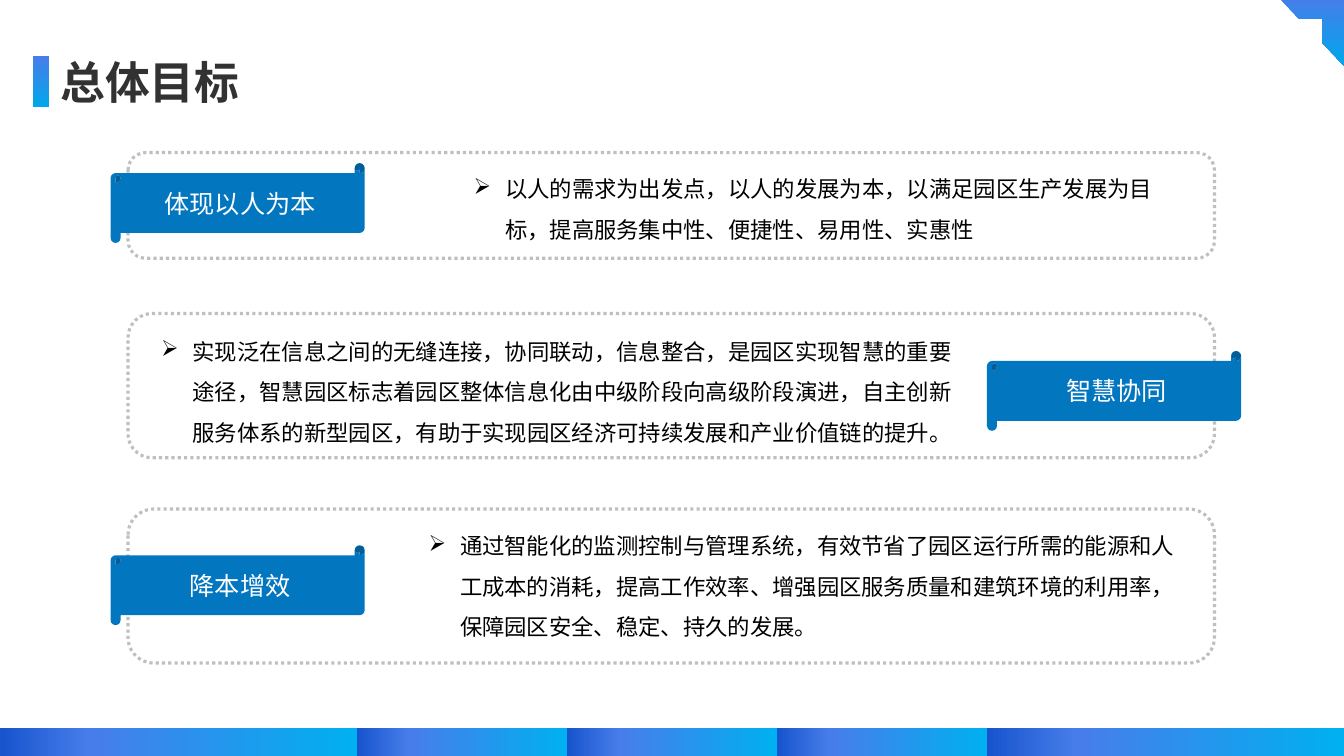
from itertools import accumulate

from lxml.etree import SubElement
from pptx import Presentation
from pptx.dml.color import RGBColor
from pptx.enum.dml import MSO_LINE
from pptx.enum.shapes import MSO_SHAPE as Preset
from pptx.enum.text import MSO_ANCHOR as Anchor, PP_ALIGN as Align
from pptx.oxml.ns import qn
from pptx.util import Pt

# Content: places are left, top, width, height in points
TITLE = "总体目标"
GOALS = [
    {
        "name": "体现以人为本",
        "detail": "以人的需求为出发点，以人的发展为本，以满足园区生产发展为目标，提高服务集中性、便捷性、易用性、实惠性",
        "frame": (109, 75.5),
        "label": (79, 116.5),
        "body": (331.2, 112.3, 504.7, 65.5),
    },
    {
        "name": "智慧协同",
        "detail": "实现泛在信息之间的无缝连接，协同联动，信息整合，是园区实现智慧的重要途径，智慧园区标志着园区整体信息化由中级阶段向高级阶段演进，自主创新服务体系的新型园区，有助于实现园区经济可持续发展和产业价值链的提升。",
        "frame": (224, 103),
        "label": (705, 250.7),
        "body": (108, 228.5, 584, 94.3),
    },
    {
        "name": "降本增效",
        "detail": "通过智能化的监测控制与管理系统，有效节省了园区运行所需的能源和人工成本的消耗，提高工作效率、增强园区服务质量和建筑环境的利用率，保障园区安全、稳定、持久的发展。",
        "frame": (363.6, 110),
        "label": (79, 389.5),
        "body": (299, 367.2, 563, 94.3),
    },
]
FRAME_LEFT, FRAME_WIDTH = 91.5, 776
LABEL_SIZE = (181.5, 57)
FOOTER_WIDTHS = [255, 150, 150, 150, 255]
FOOTER_TOP, FOOTER_HEIGHT = 520, 25
INDENT = 22.5

# Style
HEAD_FONT, BODY_FONT = "Noto Sans CJK SC", "Arial"
INK = RGBColor(0x32, 0x32, 0x32)
BLACK = RGBColor(0, 0, 0)
WHITE = RGBColor(0xFF, 0xFF, 0xFF)
GREY = RGBColor(0xBF, 0xBF, 0xBF)
LABEL_BLUE = RGBColor(0x03, 0x76, 0xC0)
BLUE = RGBColor(0x47, 0x7D, 0xEA)
SKY = RGBColor(0x00, 0xA7, 0xEA)
CYAN = RGBColor(0x00, 0xB0, 0xF0)
NAVY = RGBColor(0x17, 0x54, 0xCD)
ACCENT_STOPS = [(0, BLUE), (100, SKY)]
FOOTER_STOPS = [(0, CYAN), (75, BLUE), (100, NAVY)]


def add_preset(page, preset, place):
    shape = page.shapes.add_shape(preset, *map(Pt, place))
    shape.shadow.inherit = False
    shape.line.fill.background()
    return shape


def add_gradient(page, preset, place, stops, angle):
    shape = add_preset(page, preset, place)
    shape.fill.gradient()
    shape.fill.gradient_angle = -angle % 360
    stop_list = shape._element.spPr.find(qn("a:gradFill")).find(qn("a:gsLst"))
    for old in list(stop_list):
        stop_list.remove(old)
    for percent, color in stops:
        stop = SubElement(stop_list, qn("a:gs"), pos=str(percent * 1000))
        SubElement(stop, qn("a:srgbClr"), val=str(color))
    return shape


def write(shape, text, font, size, color, bold=False):
    para = shape.text_frame.paragraphs[0]
    para.text = text
    para.font.name, para.font.size = font, Pt(size)
    para.font.color.rgb, para.font.bold = color, bold
    # East Asian face for the Chinese text
    if font == HEAD_FONT:
        latin = para.font._element.find(qn("a:latin"))
        face = latin.makeelement(qn("a:ea"), {"typeface": font})
        latin.addnext(face)
    return para


def add_bullet(para):
    props = para._p.get_or_add_pPr()
    props.set("marL", str(Pt(INDENT)))
    props.set("indent", str(-Pt(INDENT)))
    bullet = props.makeelement(qn("a:buChar"), {"char": "➢"})
    props.find(qn("a:defRPr")).addprevious(bullet)


def add_goal(page, goal):
    # Detail text
    body = page.shapes.add_textbox(*map(Pt, goal["body"]))
    body.text_frame.word_wrap = True
    para = write(body, goal["detail"], BODY_FONT, 16, BLACK)
    para.line_spacing = 1.5
    add_bullet(para)

    # Dotted frame
    top, height = goal["frame"]
    frame = add_preset(page, Preset.ROUNDED_RECTANGLE, (FRAME_LEFT, top, FRAME_WIDTH, height))
    frame.fill.background()
    frame.line.color.rgb = GREY
    frame.line.width = Pt(2.25)
    frame.line.dash_style = MSO_LINE.ROUND_DOT

    # Scroll label
    label = add_preset(page, Preset.HORIZONTAL_SCROLL, goal["label"] + LABEL_SIZE)
    label.fill.solid()
    label.fill.fore_color.rgb = LABEL_BLUE
    label.text_frame.vertical_anchor = Anchor.MIDDLE
    write(label, goal["name"], HEAD_FONT, 18, WHITE).alignment = Align.CENTER


def main():
    deck = Presentation()
    deck.slide_width, deck.slide_height = Pt(960), Pt(540)
    page = deck.slides.add_slide(deck.slide_layouts[6])

    # Title and corner
    title = page.shapes.add_textbox(Pt(36), Pt(35.3), Pt(144), Pt(46))
    title.text_frame.word_wrap = False
    write(title, TITLE, HEAD_FONT, 32, INK, bold=True)
    add_gradient(page, Preset.RECTANGLE, (23.7, 39.8, 11.5, 36.7), ACCENT_STOPS, 90)
    corner = add_gradient(page, Preset.HALF_FRAME, (913, -2.2, 47, 49), ACCENT_STOPS, 90)
    corner._element.spPr.find(qn("a:xfrm")).set("flipH", "1")

    # Footer strip
    for left, width in zip(accumulate([0] + FOOTER_WIDTHS), FOOTER_WIDTHS):
        place = (left, FOOTER_TOP, width, FOOTER_HEIGHT)
        add_gradient(page, Preset.RECTANGLE, place, FOOTER_STOPS, 180)

    for goal in GOALS:
        add_goal(page, goal)
    deck.save("out.pptx")


if __name__ == "__main__":
    main()
